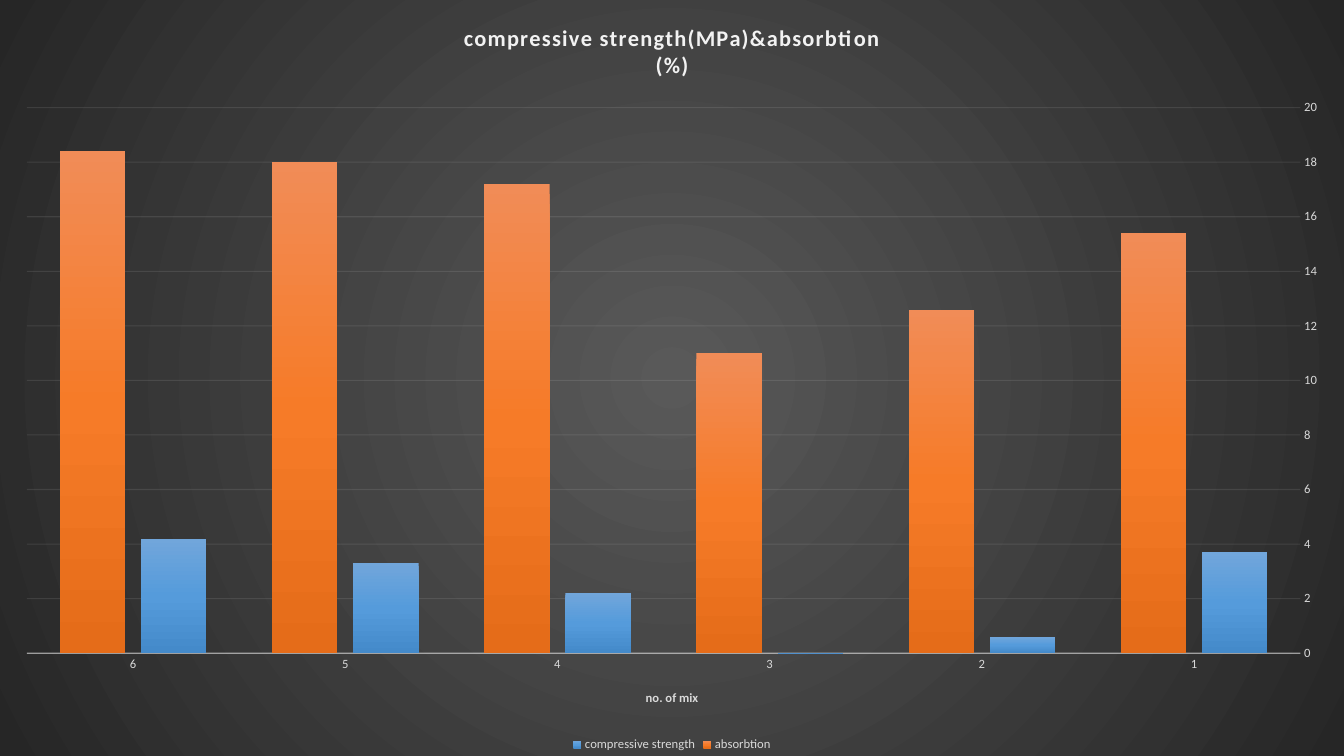
from lxml import etree
from pptx import Presentation
from pptx import util as u
from pptx.chart import data as chart_data
from pptx.dml import color
from pptx.enum import chart as ec
from pptx.oxml import ns, parse_xml

COLORS = {
    "backdrop": "000000", "centre": "595959", "edge": "262626",
    "title": "F2F2F2", "label": "D9D9D9", "rule": "F2F2F2", "text": "FFFFFF",
}
MIXES = ["1", "2", "3", "4", "5", "6"]
SERIES = {
    "compressive strength": ([3.7, 0.6, 0, 2.2, 3.3, 4.2], ["71A6DB", "559BDB", "448ACA"]),
    "absorbtion": ([15.4, 12.6, 11, 17.2, 18, 18.4], ["F18C57", "F67B28", "E56C19"]),
}
LINEAR = '<a:lin ang="5400000" scaled="0"/>'
RADIAL = ('<a:path path="circle"><a:fillToRect l="50000" t="50000" '
          'r="50000" b="50000"/></a:path>')
LABEL_FORMAT = {"name": "Calibri", "size": u.Pt(9), "bold": False}
AXIS_TITLE_FORMAT = {**LABEL_FORMAT, "bold": True}
TITLE_FORMAT = {"name": "Calibri", "size": u.Pt(16), "bold": True}


def style_font(font, values, hue):
    for attribute, value in values.items():
        setattr(font, attribute, value)
    font.color.rgb = color.RGBColor.from_string(COLORS[hue])


def gradient(hues, direction):
    """Evenly spaced gradient stops with the given direction element."""
    step = 100000 // (len(hues) - 1)
    stops = "".join(f'<a:gs pos="{i * step}"><a:srgbClr val="{hue}"/></a:gs>'
                    for i, hue in enumerate(hues))
    return parse_xml(f'<a:gradFill {ns.nsdecls("a")} rotWithShape="1">'
                     f'<a:gsLst>{stops}</a:gsLst>{direction}</a:gradFill>')


def style_line(line, width, opacity):
    line.width = u.Pt(width)
    line.color.rgb = color.RGBColor.from_string(COLORS["rule"])
    for hue in line._ln.iter(ns.qn("a:srgbClr")):
        etree.SubElement(hue, ns.qn("a:alpha"), val=str(opacity * 1000))


def write_title(owner, lines, values, hue, spacing=0):
    frame = owner.text_frame
    for i, line in enumerate(lines):
        paragraph = frame.add_paragraph() if i else frame.paragraphs[0]
        run = paragraph.add_run()
        run.text = line
        style_font(run.font, values, hue)
        if spacing:
            run.font._element.set("spc", str(spacing))


def add_strength_chart(slide, width, height):
    mix_data = chart_data.CategoryChartData()
    mix_data.categories = MIXES
    for name, (values, _) in SERIES.items():
        mix_data.add_series(name, values)
    chart = slide.shapes.add_chart(
        ec.XL_CHART_TYPE.COLUMN_CLUSTERED, 0, 0, width, height, mix_data).chart
    style_font(chart.font, {"name": "Calibri", "size": u.Pt(10)}, "text")

    # Radial backdrop
    backdrop = etree.Element(ns.qn("c:spPr"))
    backdrop.append(gradient([COLORS["centre"], COLORS["edge"]], RADIAL))
    etree.SubElement(etree.SubElement(backdrop, ns.qn("a:ln")), ns.qn("a:noFill"))
    chart._chartSpace.find(ns.qn("c:chart")).addnext(backdrop)

    # Columns
    plot = chart.plots[0]
    plot.vary_by_categories = False
    plot.gap_width, plot.overlap = 100, -24
    for series in plot.series:
        hues = SERIES[series.name][1]
        series._element.get_or_add_spPr().append(gradient(hues, LINEAR))
    return chart


def style_axes(chart):
    mix_axis, value_axis = chart.category_axis, chart.value_axis
    for axis in (mix_axis, value_axis):
        axis.major_tick_mark = axis.minor_tick_mark = ec.XL_TICK_MARK.NONE
        style_font(axis.tick_labels.font, LABEL_FORMAT, "label")
    mix_axis.reverse_order = True
    style_line(mix_axis.format.line, 1, 54)
    write_title(mix_axis.axis_title, ["no. of mix"], AXIS_TITLE_FORMAT, "label")
    value_axis.format.line.fill.background()
    value_axis.has_major_gridlines = True
    style_line(value_axis.major_gridlines.format.line, 0.75, 10)


def style_legend(chart):
    chart.has_legend = True
    chart.legend.position = ec.XL_LEGEND_POSITION.BOTTOM
    chart.legend.include_in_layout = False
    style_font(chart.legend.font, LABEL_FORMAT, "label")


def main():
    deck = Presentation()
    deck.slide_width, deck.slide_height = u.Inches(13.33), u.Inches(7.5)
    slide = deck.slides.add_slide(deck.slide_layouts[6])
    slide.background.fill.solid()
    slide.background.fill.fore_color.rgb = color.RGBColor.from_string(COLORS["backdrop"])

    chart = add_strength_chart(slide, deck.slide_width, deck.slide_height)
    chart.has_title = True
    write_title(chart.chart_title, ["compressive strength(MPa)&absorbtion", "(%)"],
                TITLE_FORMAT, "title", spacing=100)
    chart.chart_title.include_in_layout = False
    style_axes(chart)
    style_legend(chart)
    deck.save("out.pptx")


if __name__ == "__main__":
    main()
